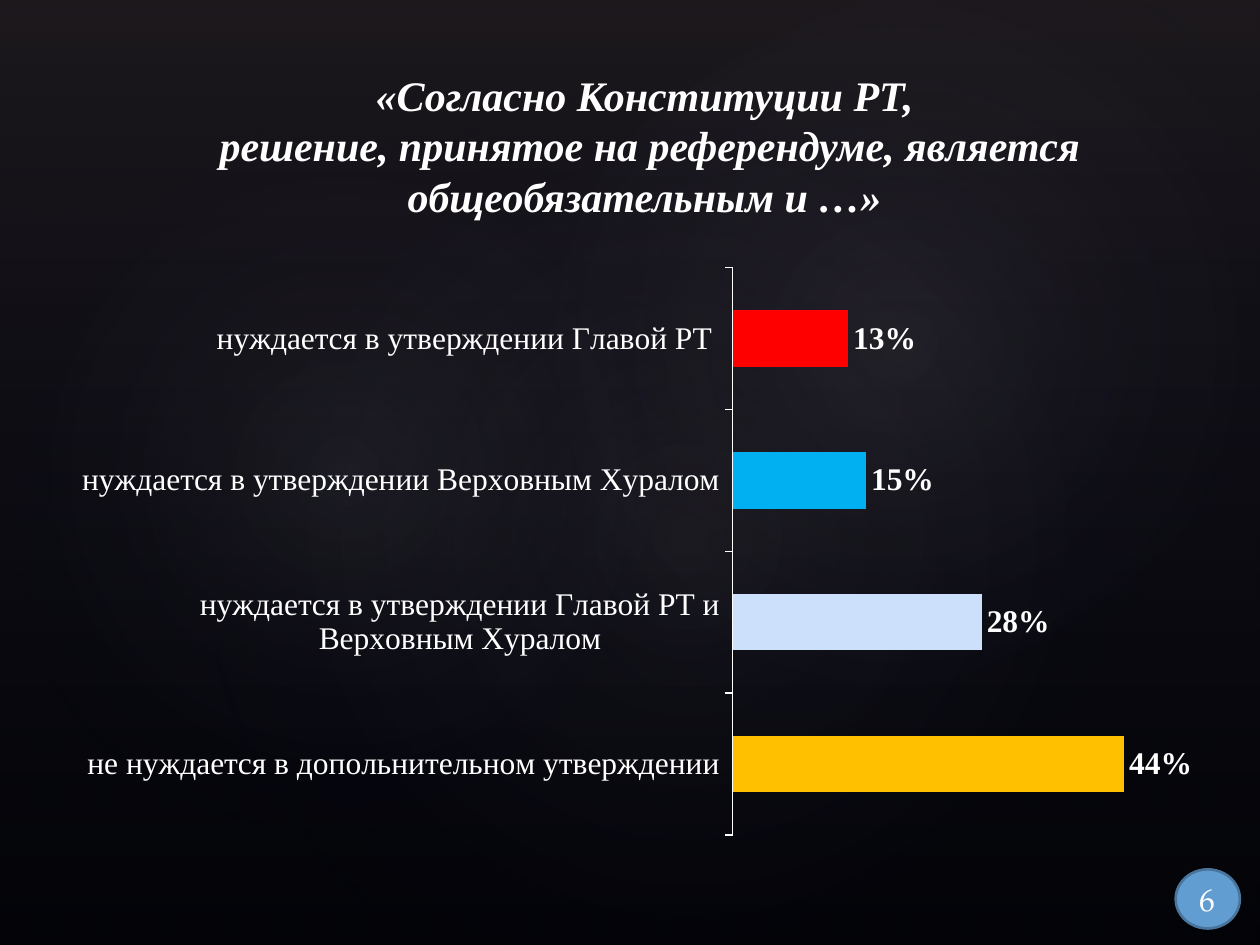
from lxml.etree import SubElement
from pptx import Presentation
from pptx.chart.data import CategoryChartData
from pptx.dml.color import RGBColor
from pptx.enum.chart import XL_CHART_TYPE as ChartType, XL_LABEL_POSITION as LabelPosition
from pptx.enum.chart import XL_TICK_MARK as TickMark
from pptx.enum.shapes import MSO_SHAPE as Shape
from pptx.enum.text import MSO_ANCHOR as Anchor, PP_ALIGN as Align
from pptx.oxml import parse_xml
from pptx.oxml.ns import nsdecls, qn
from pptx.util import Pt

COLORS = {
    "black": "000000", "white": "FFFFFF", "plum": "504652", "navy": "242852",
    "mist": "C4BCC6", "red": "FF0000", "sky": "00B0F0", "pale": "CDE0FB",
    "amber": "FFC000", "badge": "629DD1", "badge edge": "49749B",
}
SERIF, THEME_FONT = "Times New Roman", "TeX Gyre Pagella"

TITLE = ("«Согласно Конституции РТ,\v решение, принятое на референдуме, "
         "является общеобязательным и …»")
ANSWERS = [
    ("нуждается в утверждении Главой РТ ", 0.13, "red"),
    ("нуждается в утверждении Верховным Хуралом", 0.15, "sky"),
    ("нуждается в утверждении Главой РТ и Верховным Хуралом", 0.28, "pale"),
    ("не нуждается в допольнительном утверждении", 0.44, "amber"),
]
PAGE_NUMBER = "6"

# Left, top, width, height in points
SLIDE = (0, 0, 720, 540)
TITLE_BOX = (90, 39.6, 556.6, 90)
CHART_BOX = (33.8, 146.2, 652.3, 337.7)
BADGE_BOX = (671.8, 496.8, 36.7, 33.8)
PLOT_SHARE = {"x": 0.59, "y": 0.02, "w": 0.39, "h": 0.96}
# Box, rotation, opacity of the centre in percent
GLOWS = [
    ((108, 82.1, 570.2, 449.3), 328.7, 7),
    ((-21.6, 92.2, 436.3, 352.8), 294.3, 8),
    ((257.8, 9.4, 510.5, 374.4), 328.7, 8),
]


def color(name):
    return RGBColor.from_string(COLORS[name])


def points(box):
    return [Pt(value) for value in box]


def format_font(font, size, name=SERIF, bold=False, italic=False):
    font.size, font.name, font.bold, font.italic = Pt(size), name, bold, italic
    font.color.rgb = color("white")


def write_text(frame, text, anchor=Anchor.MIDDLE, **font_format):
    frame.word_wrap = True
    frame.vertical_anchor = anchor
    para = frame.paragraphs[0]
    para.text = text
    para.alignment = Align.CENTER
    for span in para.runs:
        format_font(span.font, **font_format)


def add_shape(page, kind, box):
    shape = page.shapes.add_shape(kind, *points(box))
    shape.shadow.inherit = False
    return shape


def add_gradient(page, kind, box, stops, direction, rotation=0):
    """Add a borderless shape; stops are (position %, color name, opacity %)."""
    shape = add_shape(page, kind, box)
    shape.rotation = rotation
    shape.line.fill.background()
    stop_xml = "".join(
        f'<a:gs pos="{position * 1000}"><a:srgbClr val="{COLORS[name]}">'
        f'<a:alpha val="{opacity * 1000}"/></a:srgbClr></a:gs>'
        for position, name, opacity in stops)
    fill = parse_xml(f'<a:gradFill {nsdecls("a")} rotWithShape="1">'
                     f'<a:gsLst>{stop_xml}</a:gsLst>{direction}</a:gradFill>')
    shape.element.spPr.find(qn("a:prstGeom")).addnext(fill)


def add_backdrop(page):
    fill = page.background.fill
    fill.solid()
    fill.fore_color.rgb = color("black")
    add_gradient(page, Shape.RECTANGLE, SLIDE, [(0, "plum", 36), (100, "navy", 10)],
                 '<a:lin ang="5400000" scaled="0"/>')
    radial = ('<a:path path="circle"><a:fillToRect l="50000" t="50000" '
              'r="50000" b="50000"/></a:path>')
    for box, rotation, opacity in GLOWS:
        add_gradient(page, Shape.OVAL, box, [(0, "mist", opacity), (58, "navy", 0)],
                     radial, rotation)


def add_title(page):
    title = page.shapes.title
    title.left, title.top, title.width, title.height = points(TITLE_BOX)
    write_text(title.text_frame, TITLE, anchor=Anchor.BOTTOM, size=24, bold=True, italic=True)
    page.shapes.element.append(title.element)  # in front of the backdrop


def place_plot(chart):
    plot_area = chart.element.find(".//" + qn("c:plotArea"))
    layout = plot_area.find(qn("c:layout"))
    if layout is None:
        layout = parse_xml(f'<c:layout {nsdecls("c")}/>')
        plot_area.insert(0, layout)
    manual = SubElement(layout, qn("c:manualLayout"))
    settings = {"layoutTarget": "inner", "xMode": "edge", "yMode": "edge", **PLOT_SHARE}
    for tag, value in settings.items():
        SubElement(manual, qn("c:" + tag)).set("val", str(value))


def add_answer_chart(page):
    data = CategoryChartData(number_format="0%")
    data.categories = [answer for answer, _, _ in ANSWERS]
    data.add_series("Series 1", [share for _, share, _ in ANSWERS])
    chart = page.shapes.add_chart(ChartType.BAR_CLUSTERED, *points(CHART_BOX), data).chart
    chart.has_legend = chart.has_title = False
    format_font(chart.font, 10, THEME_FONT)
    place_plot(chart)

    answers_axis, share_axis = chart.category_axis, chart.value_axis
    answers_axis.reverse_order = True
    answers_axis.major_tick_mark = TickMark.OUTSIDE
    answers_axis.format.line.color.rgb = color("white")
    answers_axis.format.line.width = Pt(0.75)
    format_font(answers_axis.tick_labels.font, 18)
    share_axis.minimum_scale, share_axis.maximum_scale = 0, 0.5
    share_axis.has_major_gridlines = False
    share_axis.visible = False

    plot = chart.plots[0]
    plot.gap_width = 150
    plot.vary_by_categories = False
    bars = plot.series[0]
    bars.invert_if_negative = False
    bars.format.fill.solid()
    bars.format.fill.fore_color.rgb = color(ANSWERS[0][2])
    for index, (_, _, name) in enumerate(ANSWERS[1:], start=1):
        fill = bars.points[index].format.fill
        fill.solid()
        fill.fore_color.rgb = color(name)
    labels = bars.data_labels
    labels.show_value = True
    labels.number_format, labels.number_format_is_linked = "0%", False
    labels.position = LabelPosition.OUTSIDE_END
    format_font(labels.font, 18, bold=True)


def add_page_badge(page):
    badge = add_shape(page, Shape.OVAL, BADGE_BOX)
    badge.fill.solid()
    badge.fill.fore_color.rgb = color("badge")
    badge.line.color.rgb = color("badge edge")
    badge.line.width = Pt(1.5)
    frame = badge.text_frame
    frame.margin_left = frame.margin_right = frame.margin_top = frame.margin_bottom = 0
    write_text(frame, PAGE_NUMBER, size=18, name=THEME_FONT)


def main():
    deck = Presentation()
    deck.slide_width, deck.slide_height = points(SLIDE[2:])
    page = deck.slides.add_slide(deck.slide_layouts[5])
    add_backdrop(page)
    add_title(page)
    add_answer_chart(page)
    add_page_badge(page)
    deck.save("out.pptx")


if __name__ == "__main__":
    main()
